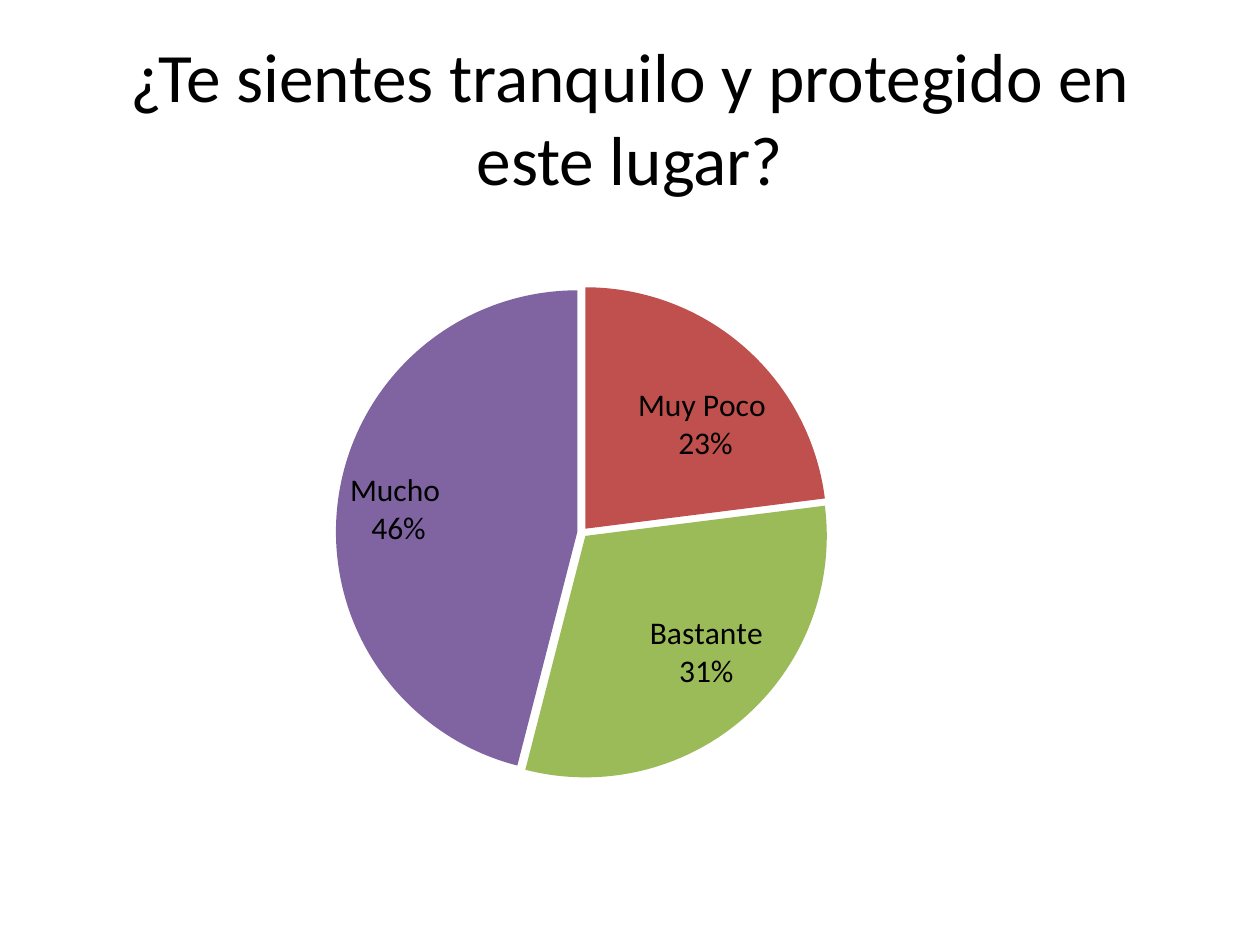
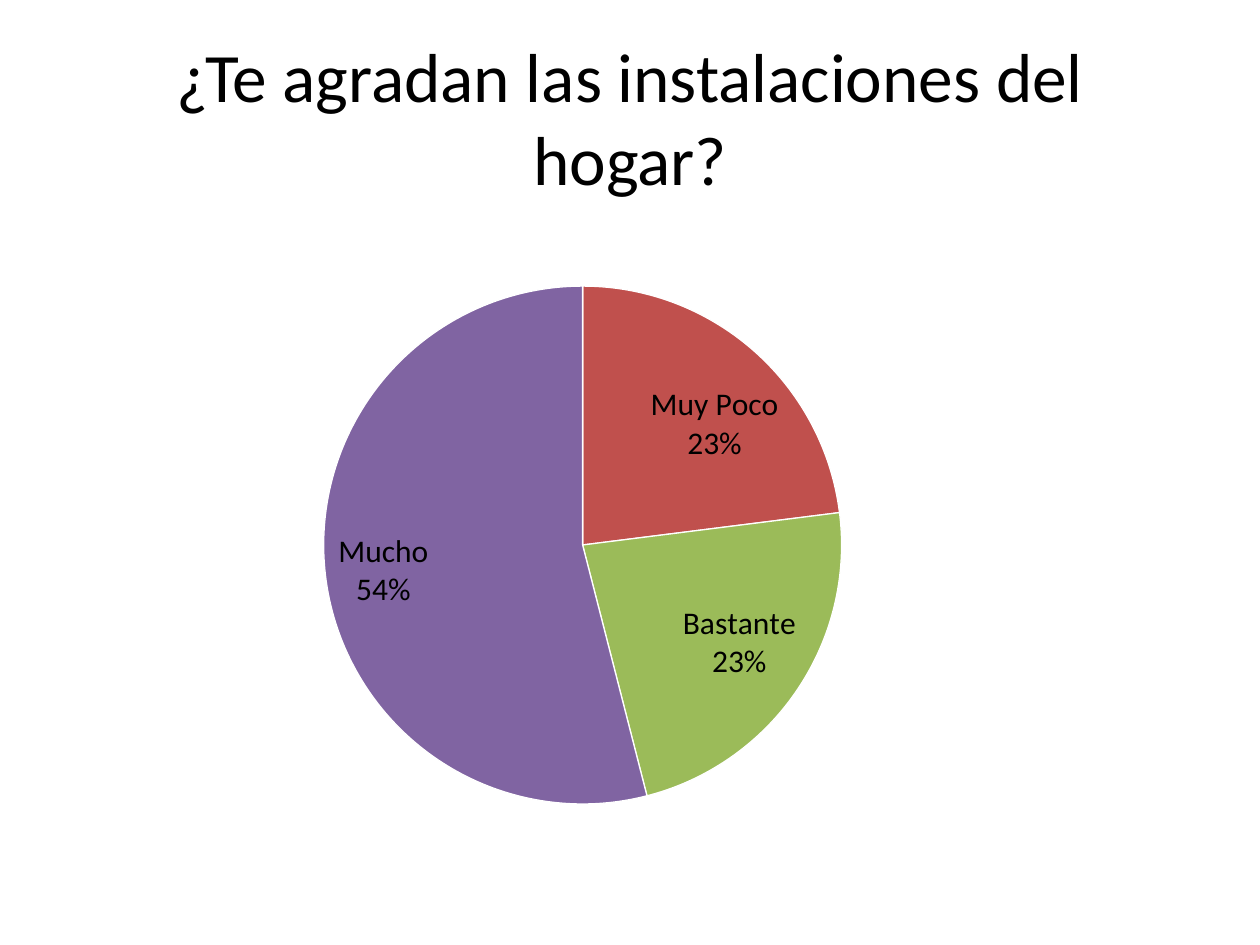
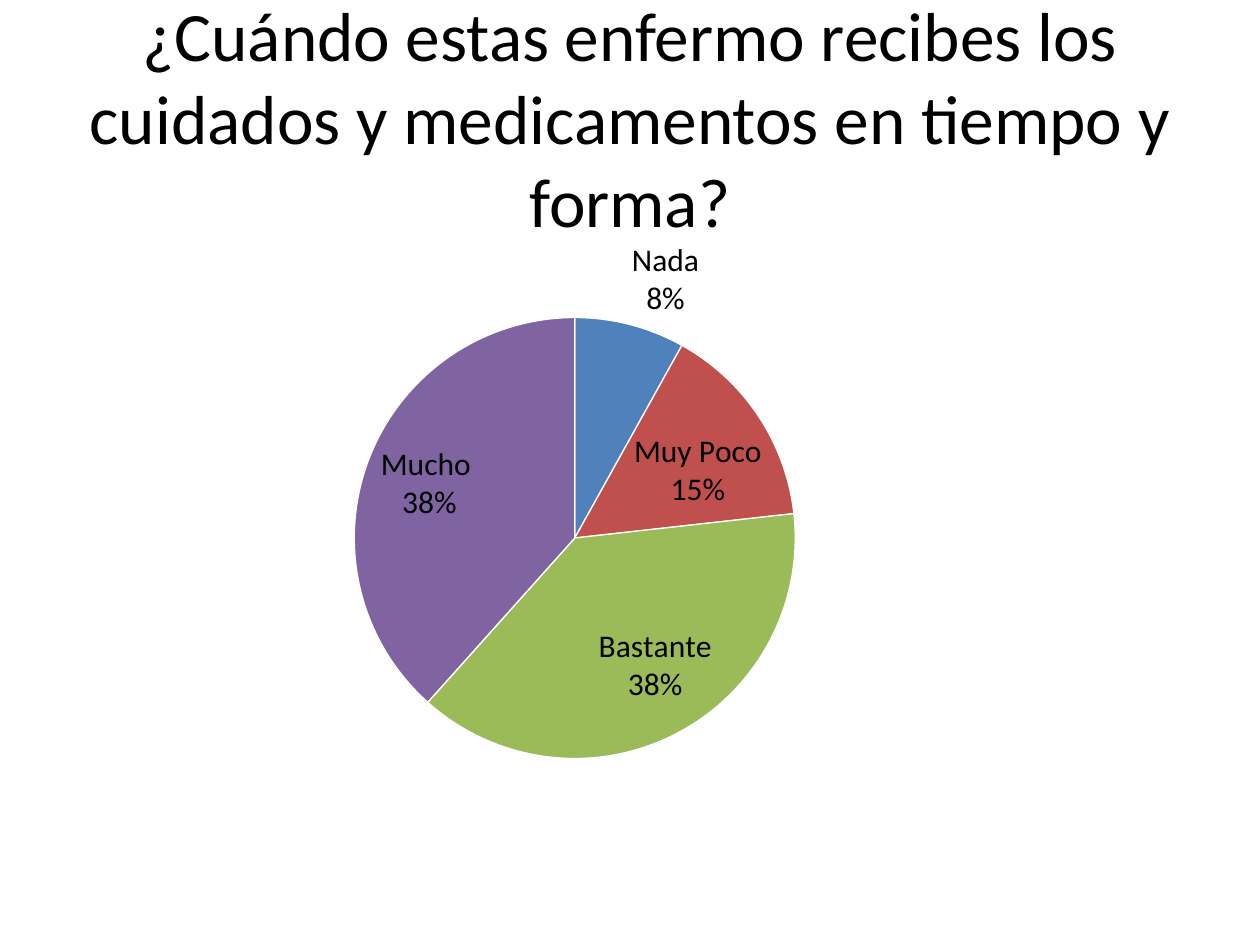
from dataclasses import dataclass

from lxml.etree import SubElement
from pptx import Presentation
from pptx.chart.data import CategoryChartData
from pptx.dml.color import RGBColor
from pptx.enum.chart import XL_CHART_TYPE, XL_LABEL_POSITION
from pptx.enum.text import MSO_ANCHOR, MSO_AUTO_SIZE, PP_ALIGN
from pptx.oxml import parse_xml
from pptx.oxml.ns import nsdecls, qn
from pptx.util import Pt


@dataclass(frozen=True)
class Theme:
    font: str = "Calibri"
    text: str = "000000"
    edge: str = "FFFFFF"
    slices: tuple = ("4F81BD", "C0504D", "9BBB59", "8064A2")
    title_size: float = 39.6
    label_size: float = 18
    edge_width: float = 0.75


THEME = Theme()
PAGE_SIZE = (720, 540)
TITLE_BOX = (36, 21.6, 648, 90)
CHART_BOX = (36, 126, 648, 356.4)
LABEL_FLAGS = {"showVal": "0", "showCatName": "1", "showPercent": "1"}

QUESTIONS = [
    {
        "title": "¿Te sientes tranquilo y protegido en este lugar?",
        "answers": {"Nada": 0, "Muy Poco ": 23, "Bastante": 31, "Mucho ": 46},
        "pie": (192, 163.5, 281.5),
        "explosion": 2,
    },
    {
        "title": "¿Te agradan las instalaciones del hogar?",
        "answers": {"Nada": 0, "Muy Poco": 23, "Bastante": 23, "Mucho": 54},
        "pie": (185, 163.5, 296),
    },
    {
        "title": "¿Cuándo estas enfermo recibes los cuidados y medicamentos "
                 "en tiempo y forma?",
        "answers": {"Nada": 8, "Muy Poco": 15, "Bastante": 38, "Mucho ": 38},
        "pie": (202.5, 181.5, 252),
    },
]


def apply_format(target, values):
    for name, value in values.items():
        setattr(target, name, value)


def format_font(font, size):
    apply_format(font, {"name": THEME.font, "size": Pt(size), "bold": False})
    font.color.rgb = RGBColor.from_string(THEME.text)


def place(shape, box):
    names = ("left", "top", "width", "height")
    apply_format(shape, dict(zip(names, map(Pt, box))))


def add_title(page, text):
    title = page.shapes.title
    place(title, TITLE_BOX)
    frame = title.text_frame
    frame.text = text
    apply_format(frame, {
        "word_wrap": True,
        "auto_size": MSO_AUTO_SIZE.NONE,
        "vertical_anchor": MSO_ANCHOR.MIDDLE,
    })
    para = frame.paragraphs[0]
    para.alignment = PP_ALIGN.CENTER
    format_font(para.runs[0].font, THEME.title_size)


def set_plot_layout(chart, pie):
    left, top, diameter = pie
    chart_left, chart_top, width, height = CHART_BOX
    fractions = {
        "x": (left - chart_left) / width,
        "y": (top - chart_top) / height,
        "w": diameter / width,
        "h": diameter / height,
    }
    plot_area = chart.plots[0]._element.getparent()
    for old_layout in plot_area.findall(qn("c:layout")):
        plot_area.remove(old_layout)
    layout = parse_xml(f"<c:layout {nsdecls('c')}><c:manualLayout/></c:layout>")
    settings = {"layoutTarget": "inner", "xMode": "edge", "yMode": "edge"}
    settings.update({name: f"{value:.4f}" for name, value in fractions.items()})
    for name, value in settings.items():
        SubElement(layout[0], qn(f"c:{name}")).set("val", value)
    plot_area.insert(0, layout)


def show_category_and_percent(element):
    for name, value in LABEL_FLAGS.items():
        element.find(qn(f"c:{name}")).set("val", value)
    separator = parse_xml(f"<c:separator {nsdecls('c')}>\n</c:separator>")
    last_flag = element.find(qn("c:showBubbleSize"))
    if last_flag is None:
        last_flag = element.find(qn("c:showPercent"))
    last_flag.addnext(separator)


def hide_label(element):
    for child in list(element)[1:]:
        element.remove(child)
    SubElement(element, qn("c:delete")).set("val", "1")


def format_labels(series, answers):
    labels = series.data_labels
    apply_format(labels, {
        "number_format": "0%",
        "number_format_is_linked": False,
        "position": XL_LABEL_POSITION.BEST_FIT,
    })
    format_font(labels.font, THEME.label_size)
    show_category_and_percent(labels._element)
    for index, value in enumerate(answers.values()):
        if not value:
            label = series.points[index].data_label
            label.position = XL_LABEL_POSITION.BEST_FIT
            hide_label(labels._element.findall(qn("c:dLbl"))[-1])


def format_slices(series, explosion):
    for index, color in enumerate(THEME.slices):
        style = series.points[index].format
        style.fill.solid()
        style.fill.fore_color.rgb = RGBColor.from_string(color)
        if explosion:
            style.line.fill.background()
        else:
            style.line.color.rgb = RGBColor.from_string(THEME.edge)
            style.line.width = Pt(THEME.edge_width)
    if explosion:
        series._element.find(qn("c:dPt")).addprevious(
            parse_xml(f'<c:explosion {nsdecls("c")} val="{explosion}"/>')
        )


def add_pie(page, answers, pie, explosion=0):
    data = CategoryChartData()
    data.categories = list(answers)
    data.add_series("Series 1", list(answers.values()))
    chart = page.shapes.add_chart(
        XL_CHART_TYPE.PIE, *map(Pt, CHART_BOX), data
    ).chart
    apply_format(chart, {"has_legend": False, "has_title": False})
    format_font(chart.font, THEME.label_size)
    plot = chart.plots[0]
    plot.vary_by_categories = True
    series = plot.series[0]
    format_slices(series, explosion)
    format_labels(series, answers)
    set_plot_layout(chart, pie)


def main():
    deck = Presentation()
    deck.slide_width, deck.slide_height = map(Pt, PAGE_SIZE)
    for question in QUESTIONS:
        page = deck.slides.add_slide(deck.slide_layouts[5])
        settings = dict(question)
        add_title(page, settings.pop("title"))
        add_pie(page, **settings)
    deck.save("out.pptx")


if __name__ == "__main__":
    main()
